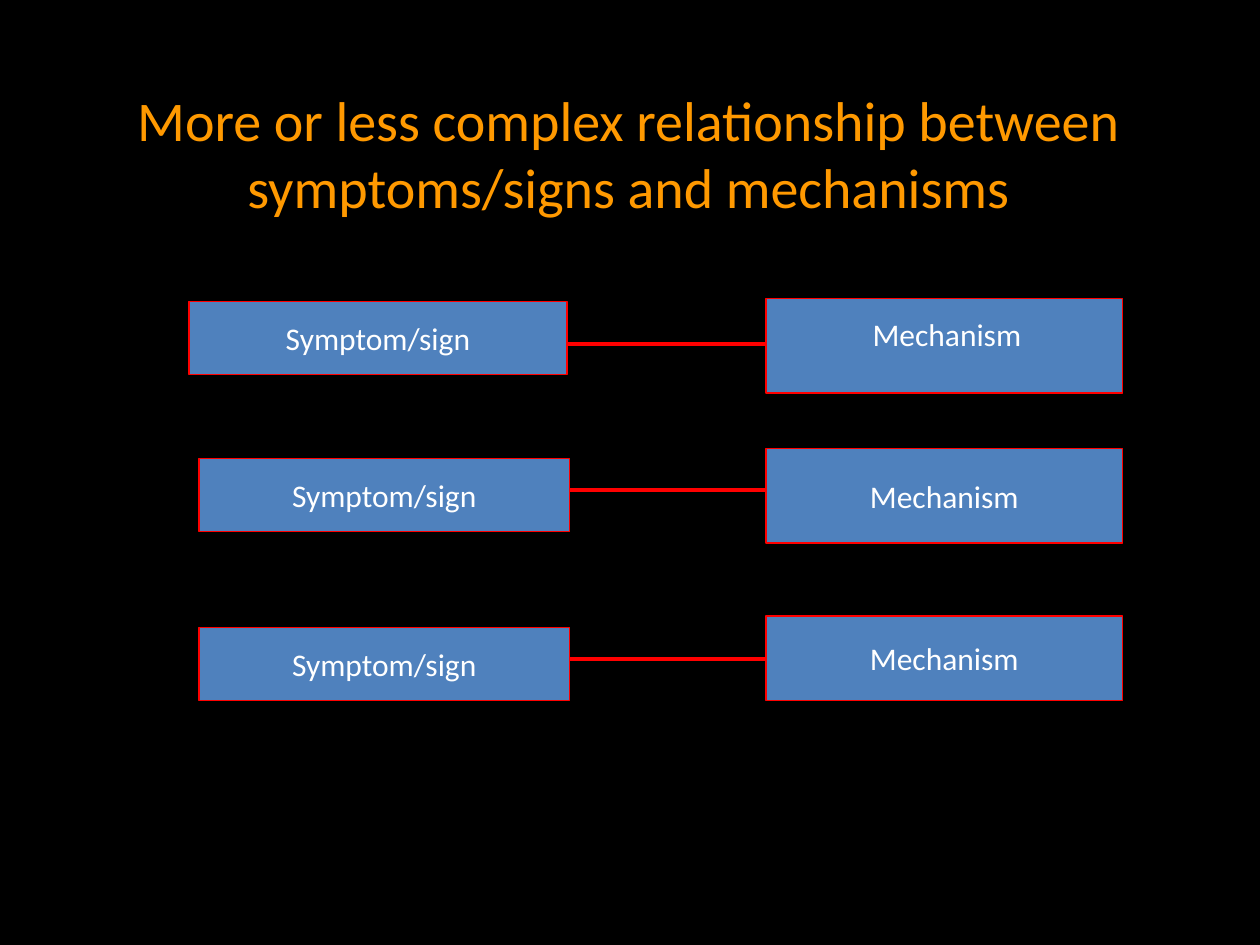
from dataclasses import dataclass
from lxml.etree import SubElement
from pptx import Presentation
from pptx.dml.color import RGBColor
from pptx.enum.shapes import MSO_CONNECTOR, MSO_SHAPE
from pptx.enum.text import MSO_ANCHOR, PP_ALIGN
from pptx.oxml.ns import qn
from pptx.util import Inches, Pt


@dataclass(frozen=True)
class Theme:
    background = RGBColor(0x00, 0x00, 0x00)
    heading = RGBColor(0xFF, 0x99, 0x00)
    box = RGBColor(0x4F, 0x81, 0xBD)
    accent = RGBColor(0xFF, 0x00, 0x00)
    label = RGBColor(0xFF, 0xFF, 0xFF)
    font = "Calibri"
    heading_size = Pt(32)
    label_size = Pt(18)
    border = Pt(0.75)
    link = Pt(2.25)


theme = Theme()
label_format = {"name": theme.font, "size": theme.label_size}
heading_format = {"name": theme.font, "size": theme.heading_size}


def write(holder, text, font_format, color, wrap, anchor):
    frame = holder.text_frame
    frame.word_wrap = wrap
    frame.vertical_anchor = anchor
    paragraph = frame.paragraphs[0]
    paragraph.alignment = PP_ALIGN.CENTER
    run = paragraph.add_run()
    run.text = text
    for key, value in font_format.items():
        setattr(run.font, key, value)
    run.font.color.rgb = color


def add_box(left, top, width, height):
    box = slide.shapes.add_shape(
        MSO_SHAPE.RECTANGLE, Inches(left), Inches(top), Inches(width), Inches(height)
    )
    box.shadow.inherit = False
    box.fill.solid()
    box.fill.fore_color.rgb = theme.box
    box.line.color.rgb = theme.accent
    box.line.width = theme.border
    return box


presentation = Presentation()
presentation.slide_width = Inches(10)
presentation.slide_height = Inches(7.5)
slide = presentation.slides.add_slide(presentation.slide_layouts[6])
slide.background.fill.solid()
slide.background.fill.fore_color.rgb = theme.background

links = [(4.49, 6.07, 5.23), (4.45, 6.08, 3.89), (4.5, 6.08, 2.73)]
for start, end, height in links:
    link = slide.shapes.add_connector(
        MSO_CONNECTOR.STRAIGHT, Inches(start), Inches(height), Inches(end), Inches(height)
    )
    link.line.color.rgb = theme.accent
    link.line.width = theme.link
    SubElement(link._element.spPr, qn("a:effectLst"))

symptoms = [(1.5, 2.39, 3), (1.58, 3.64, 2.94), (1.58, 4.98, 2.94)]
for left, top, width in symptoms:
    symptom = add_box(left, top, width, 0.58)
    write(symptom, "Symptom/sign", label_format, theme.label, False, MSO_ANCHOR.MIDDLE)

add_box(6.08, 2.37, 2.83, 0.75)
first_mechanism = slide.shapes.add_textbox(
    Inches(6.17), Inches(2.45), Inches(2.69), Inches(0.5)
)
write(first_mechanism, "Mechanism", label_format, theme.label, True, MSO_ANCHOR.TOP)

for top, height in [(3.56, 0.75), (4.89, 0.67)]:
    mechanism = add_box(6.08, top, 2.83, height)
    write(mechanism, "Mechanism", label_format, theme.label, False, MSO_ANCHOR.MIDDLE)

heading = slide.shapes.add_textbox(Inches(0.47), Inches(0.63), Inches(9.04), Inches(1.17))
write(
    heading,
    "More or less complex relationship between symptoms/signs and mechanisms",
    heading_format,
    theme.heading,
    True,
    MSO_ANCHOR.TOP,
)

presentation.save("out.pptx")
